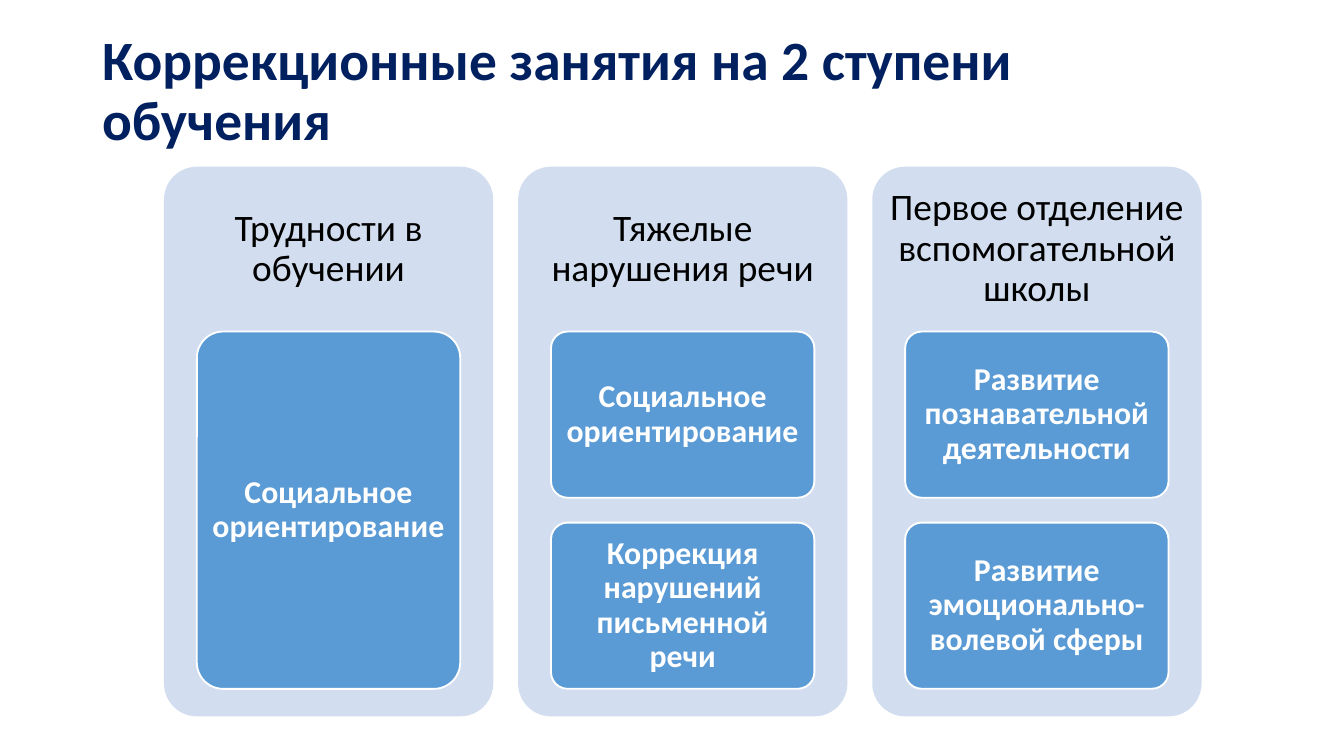
from typing import NamedTuple

from pptx import Presentation
from pptx.dml.color import RGBColor
from pptx.enum.shapes import MSO_SHAPE
from pptx.enum.text import MSO_ANCHOR, PP_ALIGN
from pptx.util import Inches, Pt

COLORS = {"title": "002060", "panel": "D2DEEF", "card": "5B9BD5",
          "white": "FFFFFF", "black": "000000"}


class Box(NamedTuple):
    x: float
    y: float
    w: float
    h: float


class TextStyle(NamedTuple):
    size: float
    color: str
    bold: bool
    align: PP_ALIGN
    inset_x: float
    inset_y: float


class Group(NamedTuple):
    heading: str
    lessons: tuple[str, ...]


TITLE = TextStyle(29.7, "title", True, PP_ALIGN.LEFT, 0.07, 0.04)
HEADING = TextStyle(20, "black", False, PP_ALIGN.CENTER, 0.08, 0.08)
LESSON = TextStyle(17, "white", True, PP_ALIGN.CENTER, 0.05, 0.04)

GROUPS = (
    Group("Трудности в обучении", ("Социальное ориентирование",)),
    Group("Тяжелые нарушения речи",
          ("Социальное ориентирование", "Коррекция нарушений письменной речи")),
    Group("Первое отделение вспомогательной школы",
          ("Развитие познавательной деятельности",
           "Развитие эмоционально-волевой сферы")),
)

# Panel grid, in inches
GRID = Box(1.22, 1.24, 7.72, 4.09)
PANEL_W = 2.45
GAP = (GRID.w - len(GROUPS) * PANEL_W) / (len(GROUPS) - 1)
# Shares of a panel's size
HEADER_SHARE, CARDS_SHARE, SIDE_SHARE = 0.3, 0.65, 0.1


def rgb(name: str) -> RGBColor:
    return RGBColor.from_string(COLORS[name])


def emu(box: Box) -> list[int]:
    return [Inches(v) for v in box]


def write(shape, text: str, style: TextStyle) -> None:
    tf = shape.text_frame
    frame_format = {
        "word_wrap": True, "vertical_anchor": MSO_ANCHOR.MIDDLE,
        "margin_left": Inches(style.inset_x), "margin_right": Inches(style.inset_x),
        "margin_top": Inches(style.inset_y), "margin_bottom": Inches(style.inset_y),
    }
    for name, value in frame_format.items():
        setattr(tf, name, value)
    p = tf.paragraphs[0]
    p.alignment, p.line_spacing = style.align, 0.9
    r = p.add_run()
    r.text = text
    for name, value in {"name": "Calibri", "size": Pt(style.size),
                        "bold": style.bold}.items():
        setattr(r.font, name, value)
    r.font.color.rgb = rgb(style.color)


def add_text(s, box: Box, text: str, style: TextStyle) -> None:
    write(s.shapes.add_textbox(*emu(box)), text, style)


def add_rounded(s, box: Box, fill: str):
    sp = s.shapes.add_shape(MSO_SHAPE.ROUNDED_RECTANGLE, *emu(box))
    sp.adjustments[0] = 0.1
    sp.shadow.inherit = False
    sp.fill.solid()
    sp.fill.fore_color.rgb = rgb(fill)
    sp.line.fill.background()
    return sp


def add_card(s, box: Box, text: str) -> None:
    sp = add_rounded(s, box, "card")
    sp.line.color.rgb = rgb("white")
    sp.line.width = Pt(1)
    write(sp, text, LESSON)


def add_group(s, column: int, group: Group) -> None:
    """Draw a panel with its heading and lesson cards sharing the space below."""
    panel = GRID._replace(x=GRID.x + column * (PANEL_W + GAP), w=PANEL_W)
    header_h = HEADER_SHARE * panel.h
    add_rounded(s, panel, "panel")
    add_text(s, panel._replace(h=header_h), group.heading, HEADING)

    side = SIDE_SHARE * panel.w
    count = len(group.lessons)
    card_h = (CARDS_SHARE * panel.h - GAP * (count - 1)) / count
    for row, lesson in enumerate(group.lessons):
        y = panel.y + header_h + row * (card_h + GAP)
        add_card(s, Box(panel.x + side, y, panel.w - 2 * side, card_h), lesson)


def main() -> None:
    prs = Presentation()
    prs.slide_width = Inches(10)
    prs.slide_height = prs.slide_width * 9 // 16
    s = prs.slides.add_slide(prs.slide_layouts[6])
    add_text(s, Box(0.69, 0.3, 8.62, 0.78),
             "Коррекционные занятия на 2 ступени обучения", TITLE)
    for column, group in enumerate(GROUPS):
        add_group(s, column, group)
    prs.save("out.pptx")


if __name__ == "__main__":
    main()
